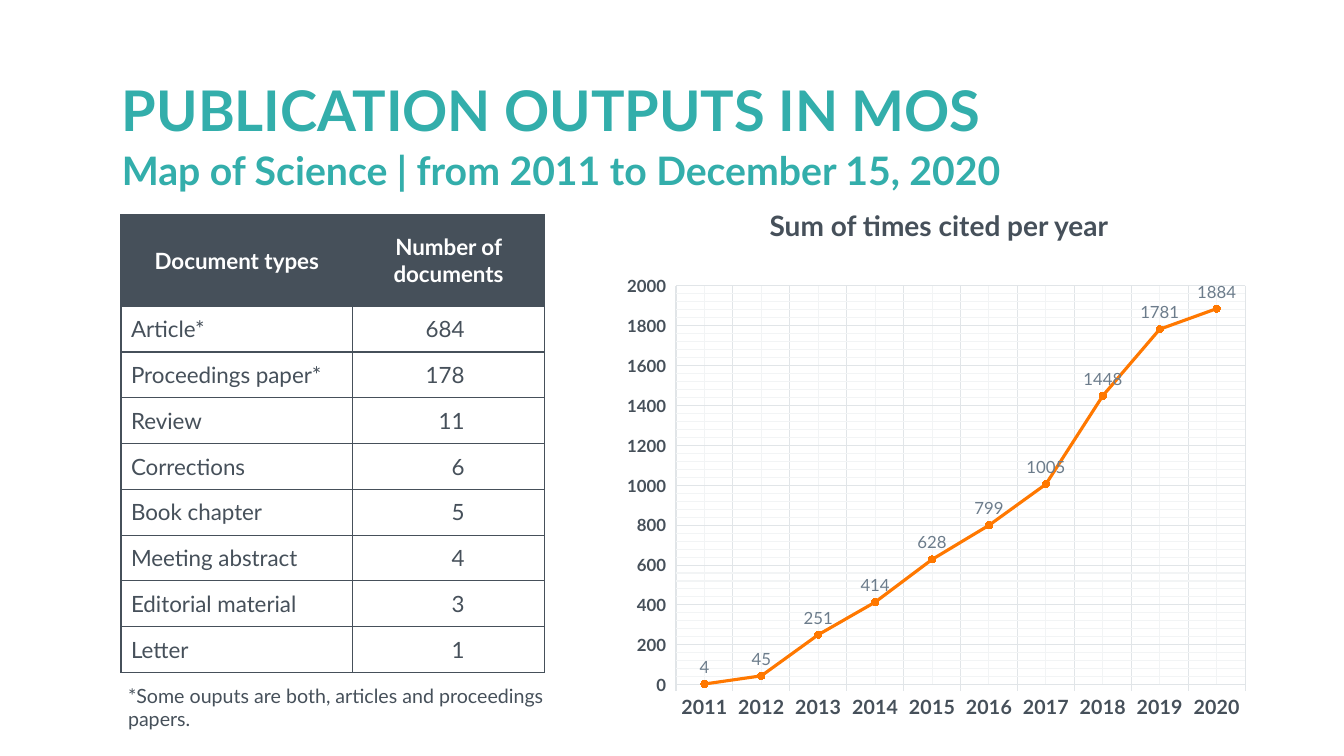
import pptx
import pptx.util
import pptx.dml.color
import pptx.chart.data
import pptx.enum.chart
import pptx.enum.text
import pptx.oxml
import pptx.oxml.ns
from lxml import etree

Pt = pptx.util.Pt
ALIGN = pptx.enum.text.PP_ALIGN
ANCHOR = pptx.enum.text.MSO_ANCHOR
FONT = "Lato"
TEAL, SLATE, GRAY = "33AEAB", "46505A", "6C7C8B"
ORANGE, GRID, MINOR_GRID, WHITE = "FF7800", "E1E5E8", "F2F4F5", "FFFFFF"

DOCUMENT_COUNTS = [
    ("Article*", 684), ("Proceedings paper*", 178), ("Review", 11),
    ("Corrections", 6), ("Book chapter", 5), ("Meeting abstract", 4),
    ("Editorial material", 3), ("Letter", 1),
]
CITATIONS = [4, 45, 251, 414, 628, 799, 1005, 1448, 1781, 1884]


def rgb(color):
    return pptx.dml.color.RGBColor.from_string(color)


def style_font(font, size, color, bold=False):
    font.name = FONT
    font.size = Pt(size)
    font.bold = bold
    font.color.rgb = rgb(color)


def style_line(line, color, width):
    line.color.rgb = rgb(color)
    line.width = Pt(width)


def line_xml(tag, color, width):
    return pptx.oxml.parse_xml(
        f'<a:{tag} {pptx.oxml.ns.nsdecls("a")} w="{Pt(width)}">'
        f'<a:solidFill><a:srgbClr val="{color}"/></a:solidFill></a:{tag}>')


def add_text(s, box, text, size, color, bold=False, align=ALIGN.LEFT,
             anchor=ANCHOR.TOP, spacing=None):
    tf = s.shapes.add_textbox(*map(Pt, box)).text_frame
    tf.word_wrap = True
    tf.vertical_anchor = anchor
    tf.text = text
    p = tf.paragraphs[0]
    p.alignment = align
    p.line_spacing = spacing
    style_font(p.runs[0].font, size, color, bold)


def add_heading(s, left, top, width):
    add_text(s, (left, top, width, 104.4), "PUBLICATION OUTPUTS IN MOS", 40,
             TEAL, True, anchor=ANCHOR.MIDDLE, spacing=0.9)
    add_text(s, (left, top + 72, width, 41),
             "Map of Science | from 2011 to December 15, 2020", 28, TEAL, True)


def set_borders(cell, color, width):
    tc_pr = cell._tc.get_or_add_tcPr()
    for position, side in enumerate(("lnL", "lnR", "lnT", "lnB")):
        tc_pr.insert(position, line_xml(side, color, width))


def fill_cell(cell, text, fill, color, bold, align):
    cell.fill.solid()
    cell.fill.fore_color.rgb = rgb(fill)
    set_borders(cell, SLATE, 1)
    cell.vertical_anchor = ANCHOR.MIDDLE
    cell.text_frame.text = text
    p = cell.text_frame.paragraphs[0]
    p.alignment = align
    style_font(p.runs[0].font, 16, color, bold)


def add_document_table(s, left, top, row_height):
    widths = (165.6, 136.8)
    rows = len(DOCUMENT_COUNTS) + 1
    height = row_height * (rows + 1)
    table = s.shapes.add_table(rows, 2, Pt(left), Pt(top), Pt(sum(widths)),
                               Pt(height)).table
    for column, width in zip(table.columns, widths):
        column.width = Pt(width)
    for i, row in enumerate(table.rows):
        row.height = Pt(row_height * (2 if i == 0 else 1))

    # Header
    for i, text in enumerate(("Document types", "Number of documents")):
        fill_cell(table.cell(0, i), text, SLATE, WHITE, True, ALIGN.CENTER)

    # Body
    for i, (kind, count) in enumerate(DOCUMENT_COUNTS, start=1):
        fill_cell(table.cell(i, 0), kind, WHITE, SLATE, False, ALIGN.LEFT)
        fill_cell(table.cell(i, 1), str(count), WHITE, SLATE, False, ALIGN.RIGHT)
        table.cell(i, 1).margin_right = Pt(57)

    # Footnote
    add_text(s, (left - 2, top + height + 4.5, 355, 24.5),
             "*Some ouputs are both, articles and proceedings papers.", 14, SLATE)


def style_axis(axis, size):
    style_font(axis.tick_labels.font, size, SLATE, True)
    axis.major_tick_mark = pptx.enum.chart.XL_TICK_MARK.OUTSIDE
    axis.minor_tick_mark = pptx.enum.chart.XL_TICK_MARK.NONE
    axis.has_major_gridlines = axis.has_minor_gridlines = True
    style_line(axis.major_gridlines.format.line, GRID, 0.75)
    minor = axis._element.find(pptx.oxml.ns.qn("c:minorGridlines"))
    sp_pr = etree.SubElement(minor, pptx.oxml.ns.qn("c:spPr"))
    sp_pr.append(line_xml("ln", MINOR_GRID, 0.75))


def set_plot_layout(chart, **fractions):
    plot_area = chart._chartSpace.chart.plotArea
    for old in plot_area.findall(pptx.oxml.ns.qn("c:layout")):
        plot_area.remove(old)
    layout = etree.Element(pptx.oxml.ns.qn("c:layout"))
    manual = etree.SubElement(layout, pptx.oxml.ns.qn("c:manualLayout"))
    settings = {"layoutTarget": "inner", "xMode": "edge", "yMode": "edge"}
    for name, value in {**settings, **fractions}.items():
        etree.SubElement(manual, pptx.oxml.ns.qn(f"c:{name}"), val=str(value))
    plot_area.insert(0, layout)


def add_citation_chart(s, left, top, width, height):
    add_text(s, (left, top, width + 3.6, 41), "Sum of times cited per year",
             20, SLATE, True, ALIGN.CENTER)
    data = pptx.chart.data.CategoryChartData()
    data.categories = [str(2011 + i) for i in range(len(CITATIONS))]
    data.add_series("Series 1", CITATIONS)
    chart = s.shapes.add_chart(
        pptx.enum.chart.XL_CHART_TYPE.LINE_MARKERS, Pt(left), Pt(top + 45.4),
        Pt(width), Pt(height - 45.4), data).chart
    chart.has_legend = chart.has_title = False
    style_font(chart.font, 10, SLATE)
    set_plot_layout(chart, x=0.095, y=0.04, w=0.885, h=0.865)

    # Axes
    style_axis(chart.category_axis, 14)
    style_line(chart.category_axis.format.line, GRID, 0.75)
    values = chart.value_axis
    style_axis(values, 12)
    values.format.line.fill.background()
    values.minimum_scale, values.maximum_scale = 0, 2000
    values.major_unit, values.minor_unit = 200, 40

    # Series with labels
    plot = chart.plots[0]
    plot.vary_by_categories = False
    series = plot.series[0]
    series.smooth = False
    style_line(series.format.line, ORANGE, 2.25)
    marker = series.marker
    marker.style = pptx.enum.chart.XL_MARKER_STYLE.CIRCLE
    marker.size = 5
    marker.format.fill.solid()
    marker.format.fill.fore_color.rgb = rgb(ORANGE)
    style_line(marker.format.line, ORANGE, 0.75)
    labels = series.data_labels
    labels.show_value = True
    labels.position = pptx.enum.chart.XL_LABEL_POSITION.ABOVE
    style_font(labels.font, 12, GRAY)


def main():
    prs = pptx.Presentation()
    prs.slide_width, prs.slide_height = Pt(960), Pt(540)
    s = prs.slides.add_slide(prs.slide_layouts[6])
    add_heading(s, 80, 28.8, 814)
    add_document_table(s, 86.4, 153.4, 32.7)
    add_citation_chart(s, 439.2, 145.4, 459.4, 375.2)
    prs.save("out.pptx")


if __name__ == "__main__":
    main()
